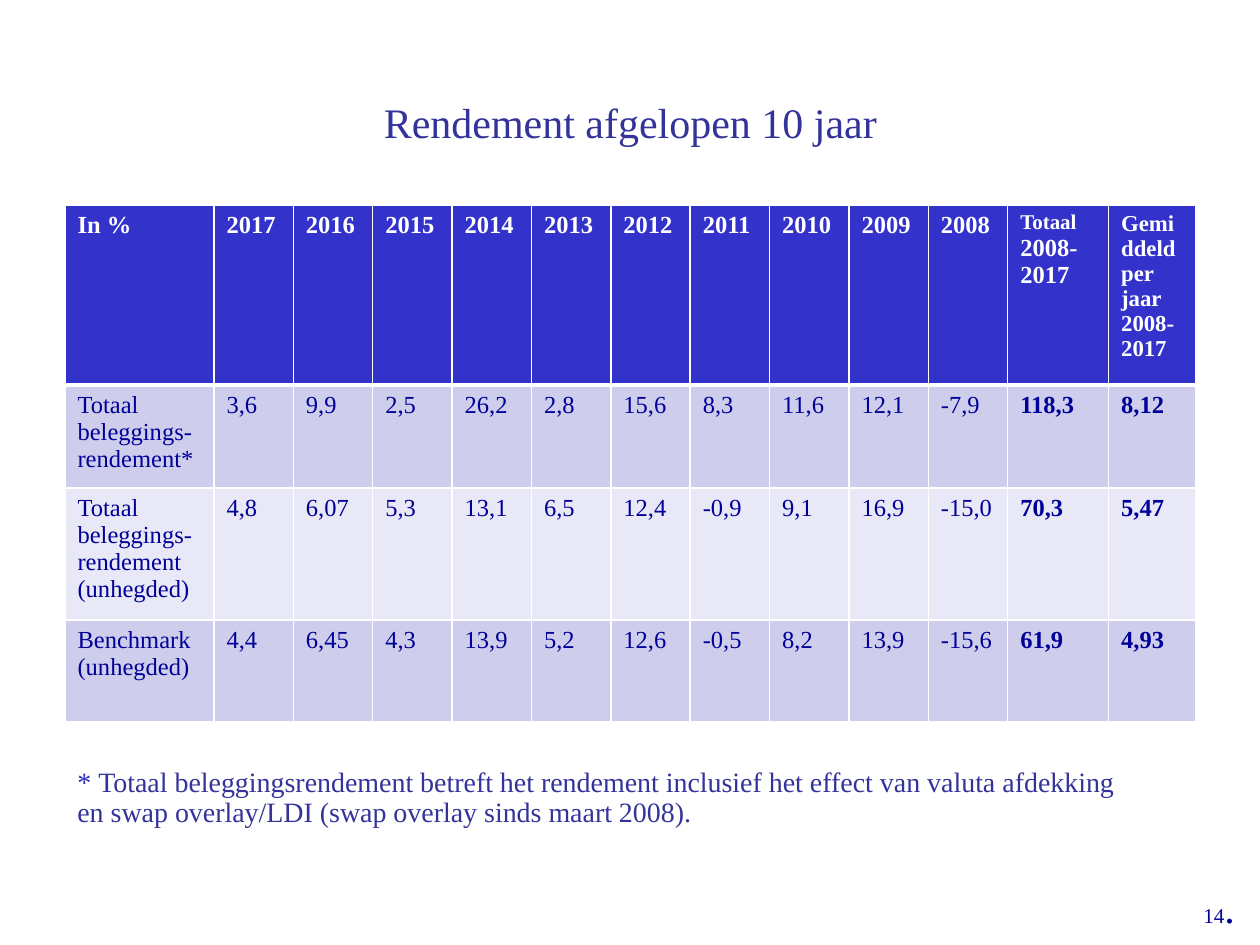
"""Build the slide with ten years of investment returns."""
from lxml import etree
from pptx import Presentation
from pptx.dml.color import RGBColor
from pptx.enum.text import MSO_ANCHOR, PP_ALIGN
from pptx.oxml.ns import qn
from pptx.util import Emu, Pt

LEFT, CENTER = PP_ALIGN.LEFT, PP_ALIGN.CENTER
TOP = MSO_ANCHOR.TOP
PX = 914400 // 126
FONT = "Times New Roman"
WHITE, NAVY, INDIGO, BLUE = "FFFFFF", "000099", "333399", "2D2DB9"
HEADER_FILL, BAND_FILLS = "3333CC", ("CECEEC", "E8E8F6")

TITLE = "Rendement afgelopen 10 jaar"
FOOTNOTE = [
    ("* ", 16, BLUE),
    ("Totaal beleggingsrendement betreft het rendement inclusief het effect van "
     "valuta afdekking en swap overlay/LDI (swap overlay sinds maart 2008).", 16, INDIGO),
]
PAGE_NUMBER = [("14", 12, NAVY), (".", 24, NAVY)]

YEARS = [str(year) for year in range(2017, 2007, -1)]
HEADER = [
    *[[(label, 14, WHITE)] for label in ["In %", *YEARS]],
    [("Totaal ", 12, WHITE), ("2008-2017", 14, WHITE)],
    [("Gemiddeld per jaar 2008-2017", 13, WHITE)],
]
RETURNS = [
    ("Totaal beleggings-rendement*", "3,6", "9,9", "2,5", "26,2", "2,8", "15,6",
     "8,3", "11,6", "12,1", "-7,9", "118,3", "8,12"),
    ("Totaal beleggings-rendement (unhegded)", "4,8", "6,07", "5,3", "13,1", "6,5", "12,4",
     "-0,9", "9,1", "16,9", "-15,0", "70,3", "5,47"),
    ("Benchmark (unhegded)", "4,4", "6,45", "4,3", "13,9", "5,2", "12,6",
     "-0,5", "8,2", "13,9", "-15,6", "61,9", "4,93"),
]
TABLE_LEFT, TABLE_TOP, TABLE_WIDTH = 65, 205, 1131
LABEL_WIDTH, TOTAL_WIDTH, AVERAGE_WIDTH = 149, 101, 87
ROW_HEIGHTS = [180, 103, 132, 102]


def px(length):
    return Emu(round(length * PX))


def color(value):
    return RGBColor.from_string(value)


def write(frame, runs, bold=False, align=LEFT, line_spacing=1.0):
    paragraph = frame.paragraphs[0]
    paragraph.alignment = align
    paragraph.line_spacing = line_spacing
    for text, size, text_color in runs:
        run = paragraph.add_run()
        run.text = text
        run.font.name = FONT
        run.font.size = Pt(size)
        run.font.bold = bold
        run.font.color.rgb = color(text_color)


def add_text(slide, box, runs, wrap=True, margin_top=6, **text_format):
    frame = slide.shapes.add_textbox(*map(px, box)).text_frame
    frame.word_wrap = wrap
    frame.vertical_anchor = TOP
    frame.margin_top = px(margin_top)
    write(frame, runs, **text_format)


def add_borders(cell, **widths):
    properties = cell._tc.get_or_add_tcPr()
    for side in "LRTB":
        line = etree.SubElement(properties, qn(f"a:ln{side}"), w=str(Pt(widths.get(side, 1))))
        fill = etree.SubElement(line, qn("a:solidFill"))
        etree.SubElement(fill, qn("a:srgbClr"), val=WHITE)


def add_returns_table(slide):
    rows = [HEADER] + [[[(value, 14, NAVY)] for value in row] for row in RETURNS]
    year_width = (TABLE_WIDTH - LABEL_WIDTH - TOTAL_WIDTH - AVERAGE_WIDTH) / len(YEARS)
    widths = [LABEL_WIDTH, *[year_width] * len(YEARS), TOTAL_WIDTH, AVERAGE_WIDTH]
    box = (TABLE_LEFT, TABLE_TOP, TABLE_WIDTH, sum(ROW_HEIGHTS))
    table = slide.shapes.add_table(len(rows), len(widths), *map(px, box)).table
    for column, width in zip(table.columns, widths):
        column.width = px(width)
    for row, height in zip(table.rows, ROW_HEIGHTS):
        row.height = px(height)
    first_total = len(YEARS) + 1
    for row_index, row in enumerate(rows):
        is_header = row_index == 0
        fill = HEADER_FILL if is_header else BAND_FILLS[(row_index - 1) % 2]
        for column_index, runs in enumerate(row):
            cell = table.cell(row_index, column_index)
            add_borders(cell, B=3 if is_header else 1, T=3 if row_index == 1 else 1)
            cell.fill.solid()
            cell.fill.fore_color.rgb = color(fill)
            write(cell.text_frame, runs, bold=is_header or column_index >= first_total)


def main():
    presentation = Presentation()
    presentation.slide_width, presentation.slide_height = px(1260), px(945)
    slide = presentation.slides.add_slide(presentation.slide_layouts[6])
    add_text(slide, (1191, 876, 60, 63), PAGE_NUMBER, wrap=False)
    add_text(slide, (95, 84, 1071, 81), [(TITLE, 24, INDIGO)], margin_top=12, align=CENTER)
    add_text(slide, (65, 721, 1071, 118), FOOTNOTE, margin_top=47, line_spacing=0.9)
    add_returns_table(slide)
    presentation.save("out.pptx")


if __name__ == "__main__":
    main()
